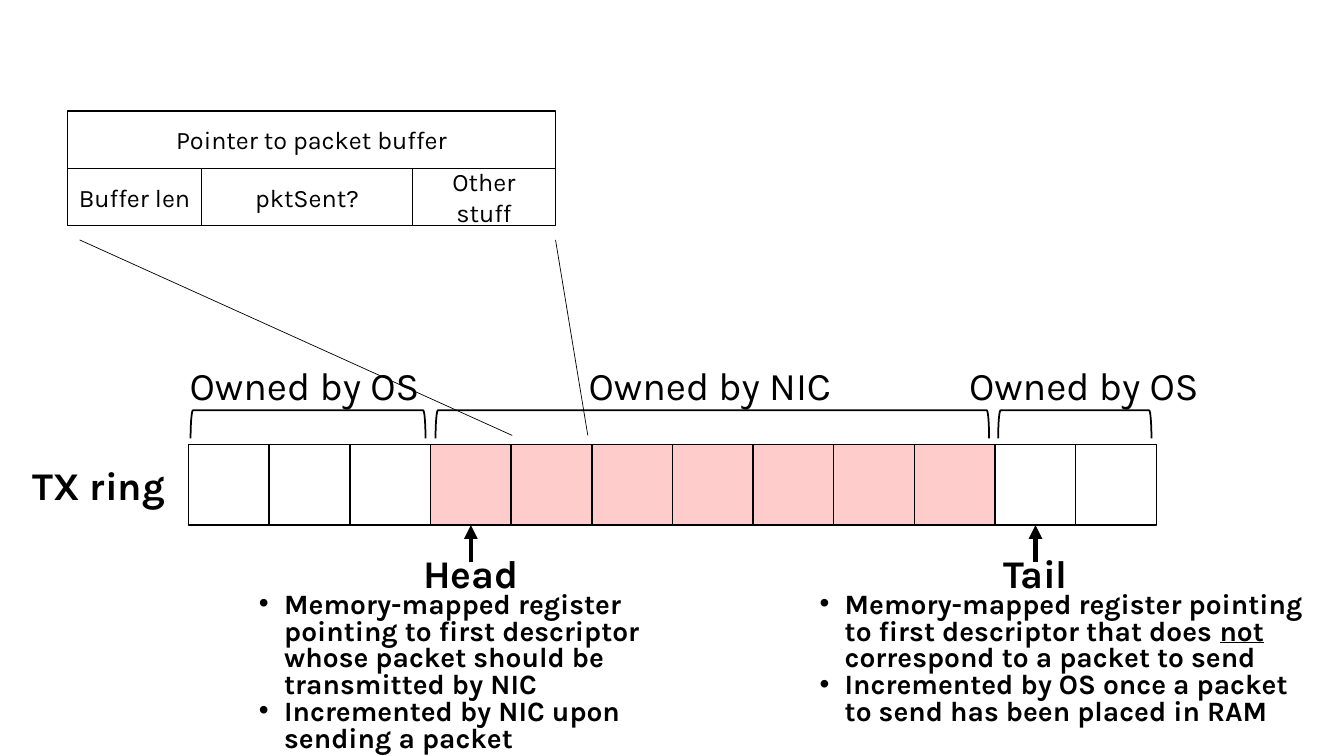
from dataclasses import dataclass

from lxml import etree
from pptx import Presentation
from pptx.dml.color import RGBColor
from pptx.enum.shapes import MSO_CONNECTOR, MSO_SHAPE
from pptx.enum.text import MSO_ANCHOR, PP_ALIGN
from pptx.oxml.ns import qn
from pptx.util import Inches, Pt

RECT, BRACKET = MSO_SHAPE.RECTANGLE, MSO_SHAPE.LEFT_BRACKET
STRAIGHT = MSO_CONNECTOR.STRAIGHT
CENTER, LEFT = PP_ALIGN.CENTER, PP_ALIGN.LEFT
TOP, MIDDLE = MSO_ANCHOR.TOP, MSO_ANCHOR.MIDDLE
BOTTOM_SITE = 2


@dataclass(frozen=True)
class Theme:
    font: str = "Karla"
    ink: RGBColor = RGBColor(0, 0, 0)
    os_fill: RGBColor = RGBColor(0xFF, 0xFF, 0xFF)
    nic_fill: RGBColor = RGBColor(0xFF, 0xCC, 0xCC)
    label: int = 28
    note: int = 20
    field: int = 18


class Deck:
    def __init__(self, slide, theme):
        self.s, self.theme = slide, theme

    def run(self, p, text, size, bold=False, underline=False):
        r = p.add_run()
        r.text = text
        r.font.name, r.font.size = self.theme.font, Pt(size)
        r.font.color.rgb = self.theme.ink
        r.font.bold = bold
        if underline:
            r.font.underline = True

    def outline(self, kind, x, y, w, h, width=1):
        sp = self.s.shapes.add_shape(kind, Inches(x), Inches(y), Inches(w), Inches(h))
        sp.shadow.inherit = False
        sp.line.color.rgb, sp.line.width = self.theme.ink, Pt(width)
        return sp

    def box(self, x, y, w, h, fill, text=""):
        sp = self.outline(RECT, x, y, w, h)
        sp.fill.solid()
        sp.fill.fore_color.rgb = fill
        if text:
            tf = sp.text_frame
            tf.word_wrap, tf.vertical_anchor = True, MIDDLE
            p = tf.paragraphs[0]
            p.alignment = CENTER
            self.run(p, text, self.theme.field)
        return sp

    def bracket(self, left, right, y, depth=0.28):
        # The preset is upright, so it is turned about its centre
        span = right - left
        sp = self.outline(BRACKET, (left + right - depth) / 2,
                          y + (depth - span) / 2, depth, span, 1.25)
        sp.fill.background()
        sp.rotation = 90

    def frame(self, x, y, w, h):
        tf = self.s.shapes.add_textbox(
            Inches(x), Inches(y), Inches(w), Inches(h)).text_frame
        tf.word_wrap, tf.vertical_anchor = True, TOP
        return tf

    def label(self, x, y, w, text, bold=False):
        p = self.frame(x, y, w, 0.57).paragraphs[0]
        p.alignment = CENTER
        self.run(p, text, self.theme.label, bold)

    def bullets(self, x, y, w, items):
        tf = self.frame(x, y, w, 1.59)
        for i, parts in enumerate(items):
            p = tf.add_paragraph() if i else tf.paragraphs[0]
            p.alignment, p.line_spacing = LEFT, 0.8
            pPr = p._p.get_or_add_pPr()
            pPr.set("marL", str(Inches(0.25)))
            pPr.set("indent", str(-Inches(0.25)))
            etree.SubElement(pPr, qn("a:buFont")).set("typeface", "Arial")
            etree.SubElement(pPr, qn("a:buChar")).set("char", "•")
            for text, underline in parts:
                self.run(p, text, self.theme.note, True, underline)

    def line(self, x1, y1, x2, y2, width):
        c = self.s.shapes.add_connector(
            STRAIGHT, Inches(x1), Inches(y1), Inches(x2), Inches(y2))
        c.line.color.rgb, c.line.width = self.theme.ink, Pt(width)
        etree.SubElement(c._element.spPr, qn("a:effectLst"))
        return c

    def arrow(self, x, y, target):
        c = self.line(x, y, x, y - 0.37, 3.25)
        c.end_connect(target, BOTTOM_SITE)
        ln = c.line._get_or_add_ln()
        etree.SubElement(ln, qn("a:tailEnd")).set("type", "triangle")


def main():
    prs = Presentation()
    prs.slide_width, prs.slide_height = Inches(13.33), Inches(7.5)
    theme = Theme()
    deck = Deck(prs.slides.add_slide(prs.slide_layouts[6]), theme)

    # Ring of descriptors
    ring_x, ring_y, cell = 1.87, 4.41, 0.8
    head, tail, count = 3, 10, 12
    cells = [deck.box(ring_x + i * cell, ring_y, cell, cell,
                      theme.nic_fill if head <= i < tail else theme.os_fill)
             for i in range(count)]

    # Owners of each stretch of the ring
    for left, right, x, w, owner in (
            (1.89, 4.22, 1.52, 3, "Owned by OS"),
            (4.32, 9.81, 4.27, 5.54, "Owned by NIC"),
            (9.9, 11.42, 9.25, 3, "Owned by OS")):
        deck.bracket(left, right, 4.07)
        deck.label(x, 3.54, w, owner)
    deck.label(0.1, 4.53, 1.76, "TX ring", bold=True)

    # Head and tail registers
    head_notes = [
        [("Memory-mapped register pointing to first descriptor whose packet "
          "should be transmitted by NIC", False)],
        [("Incremented by NIC upon sending a packet", False)]]
    tail_notes = [
        [("Memory-mapped register pointing to first descriptor that does ", False),
         ("not", True), (" correspond to a packet to send", False)],
        [("Incremented by OS once a packet to send has been placed in RAM", False)]]
    for name, index, x, w, notes in (("Head", head, 2.47, 4.65, head_notes),
                                     ("Tail", tail, 8.03, 5.07, tail_notes)):
        mid = ring_x + (index + 0.5) * cell
        deck.label(mid - 0.67, 5.4, 1.34, name, bold=True)
        deck.arrow(mid, 5.58, cells[index])
        deck.bullets(x, 5.83, w, notes)

    # Zoom lines from one descriptor to its layout
    deck.line(5.08, 4.32, 0.79, 2.38, 0.5)
    deck.line(5.83, 4.32, 5.51, 2.38, 0.5)

    # Descriptor layout
    x, y, row = 0.67, 1.1, 0.57
    deck.box(x, y, 4.84, row, theme.os_fill, "Pointer to packet buffer")
    for text, w in (("Buffer len", 1.33), ("pktSent?", 2.09), ("Other stuff", 1.42)):
        deck.box(x, y + row, w, row, theme.os_fill, text)
        x += w

    prs.save("out.pptx")


if __name__ == "__main__":
    main()
